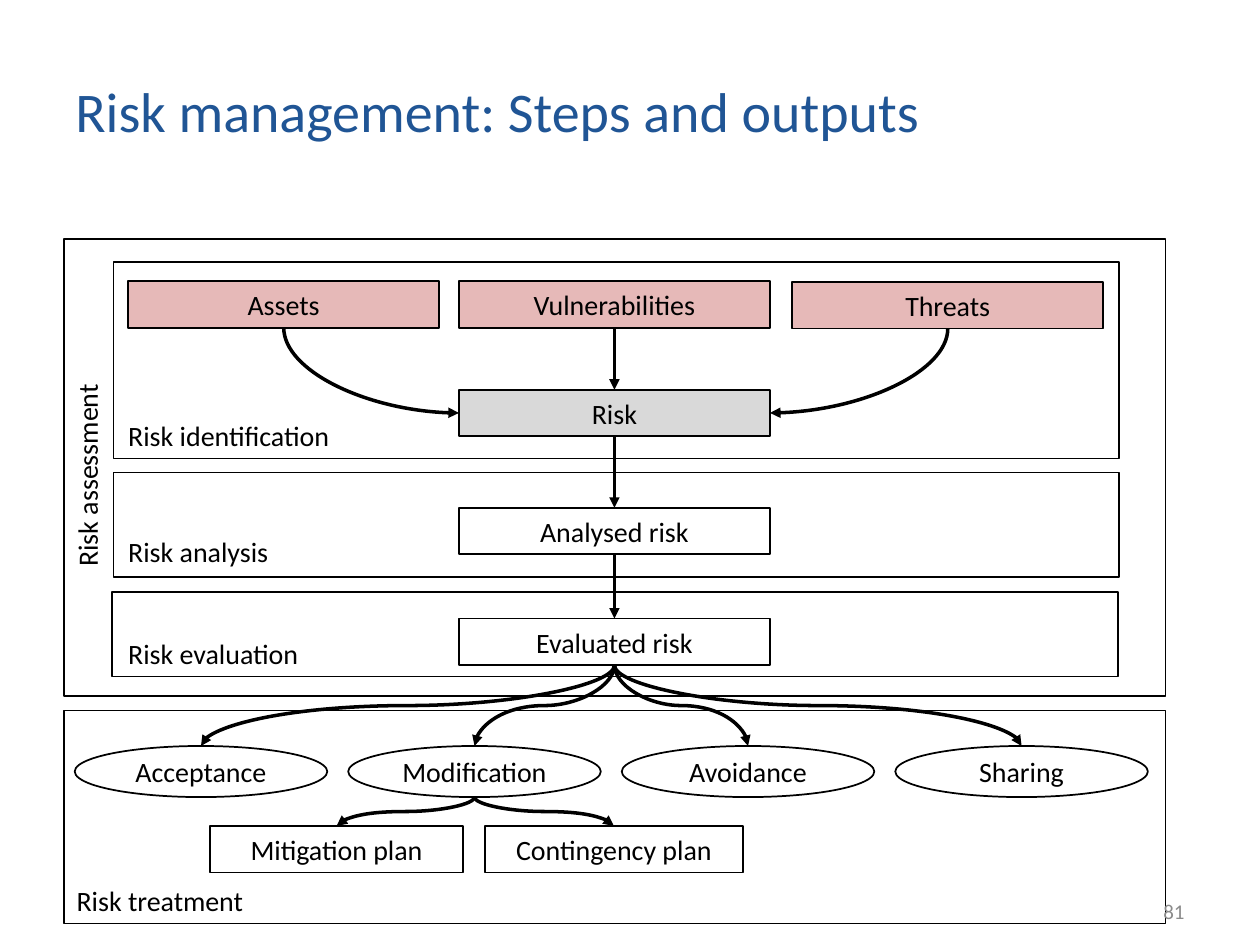
"""Build the slide on the steps and outputs of risk management."""
import lxml.etree
import pptx
import pptx.dml.color
import pptx.enum.shapes
import pptx.enum.text
import pptx.oxml.ns
import pptx.util

Pt = pptx.util.Pt
SHAPE = pptx.enum.shapes.MSO_SHAPE
CONNECTOR = pptx.enum.shapes.MSO_CONNECTOR
ALIGN = pptx.enum.text.PP_ALIGN
ANCHOR = pptx.enum.text.MSO_ANCHOR
qn = pptx.oxml.ns.qn
BLACK = "000000"
PINK = "E6B9B8"
GREY = "D9D9D9"


def color(value):
    return pptx.dml.color.RGBColor.from_string(value)


def add_box(kind, left, top, width, height, text="", fill=None):
    shape = slide.shapes.add_shape(kind, Pt(left), Pt(top), Pt(width), Pt(height))
    shape.shadow.inherit = False
    shape.line.color.rgb = color(BLACK)
    shape.line.width = Pt(1)
    if fill:
        shape.fill.solid()
        shape.fill.fore_color.rgb = color(fill)
    else:
        shape.fill.background()
    if text:
        frame = shape.text_frame
        frame.margin_left = frame.margin_right = frame.margin_top = frame.margin_bottom = 0
        frame.vertical_anchor = ANCHOR.MIDDLE
        paragraph = frame.paragraphs[0]
        paragraph.text = text
        paragraph.alignment = ALIGN.CENTER
        paragraph.font.name = "Calibri"
        paragraph.font.size = Pt(16)
        paragraph.font.color.rgb = color(BLACK)
    return shape


presentation = pptx.Presentation()
presentation.slide_width = Pt(720)
presentation.slide_height = Pt(540)
slide = presentation.slides.add_slide(presentation.slide_layouts[6])

for left, top, width, height in [
    (36.7, 136.8, 629.3, 260.8),
    (64.8, 149.8, 574.6, 112.3),
    (64.8, 270, 574.6, 59.8),
    (64.1, 338.5, 574.6, 48.2),
    (36.7, 406, 629.3, 121.8),
]:
    add_box(SHAPE.RECTANGLE, left, top, width, height)

boxes = {}
for text, left, top, width, fill in [
    ("Assets", 73.2, 160.7, 177.8, PINK),
    ("Vulnerabilities", 262.2, 160.7, 177.8, PINK),
    ("Threats", 452.7, 161.2, 177.8, PINK),
    ("Risk", 262.2, 222.7, 177.8, GREY),
    ("Analysed risk", 262.2, 290.2, 177.8, None),
    ("Evaluated risk", 262.2, 353.5, 177.8, None),
    ("Mitigation plan", 120, 472, 144.7, None),
    ("Contingency plan", 277.2, 472, 147.2, None),
]:
    boxes[text] = add_box(SHAPE.RECTANGLE, left, top, width, 26.6, text, fill)

treatments = ["Acceptance", "Modification", "Avoidance", "Sharing"]
for index, text in enumerate(treatments):
    boxes[text] = add_box(SHAPE.OVAL, 42.7 + 156.3 * index, 426.3, 144.3, 29.2, text)

arrows = []
main_steps = ["Vulnerabilities", "Risk", "Analysed risk", "Evaluated risk"]
for source, target in zip(main_steps, main_steps[1:]):
    arrow = slide.shapes.add_connector(CONNECTOR.STRAIGHT, 0, 0, 0, 0)
    arrow.begin_connect(boxes[source], 2)
    arrow.end_connect(boxes[target], 0)
    arrows.append(arrow)

curves = [("Assets", "Risk"), ("Threats", "Risk")]
curves += [("Evaluated risk", treatment) for treatment in treatments]
curves += [("Modification", "Mitigation plan"), ("Modification", "Contingency plan")]
for source, target in curves:
    start, end = boxes[source], boxes[target]
    start_x = start.left + start.width // 2
    start_y = start.top + start.height
    end_x, end_y = end.left + end.width // 2, end.top
    rightward = end_x > start_x
    if target == "Risk":
        end_x = end.left if rightward else end.left + end.width
        end_y = end.top + end.height // 2
    length, spread = end_y - start_y, abs(end_x - start_x)
    left = (start_x + end_x - length) // 2
    top = (start_y + end_y - spread) // 2
    arrow = slide.shapes.add_connector(
        CONNECTOR.CURVE, left, top, left + length, top + spread
    )
    properties = arrow._element.spPr
    transform = properties.find(qn("a:xfrm"))
    transform.set("rot", str((270 if rightward else 90) * 60000))
    if rightward:
        transform.set("flipH", "1")
    if target == "Risk":
        properties.find(qn("a:prstGeom")).set("prst", "curvedConnector2")
    arrows.append(arrow)

for arrow in arrows:
    arrow.line.color.rgb = color(BLACK)
    arrow.line.width = Pt(2)
    line = arrow.line._get_or_add_ln()
    lxml.etree.SubElement(line, qn("a:tailEnd")).set("type", "triangle")
    lxml.etree.SubElement(arrow._element.spPr, qn("a:effectLst"))

labels = [
    ("Risk management: Steps and outputs", 36, 21.6, 579, 82.8, 32, "205595"),
    ("81", 516.2, 506.2, 167.8, 28.8, 12, "8B8B8B"),
    ("Risk identification", 66.2, 235.6, 129, 26, 16, BLACK),
    ("Risk analysis", 66.2, 301.7, 94.3, 26, 16, BLACK),
    ("Risk evaluation", 66.2, 360.3, 111.6, 26, 16, BLACK),
    ("Risk treatment", 36.7, 501.3, 109.4, 26, 16, BLACK),
    ("Risk assessment", -10, 258.5, 118.8, 26, 16, BLACK),
]
for text, left, top, width, height, size, value in labels:
    label = slide.shapes.add_textbox(Pt(left), Pt(top), Pt(width), Pt(height))
    frame = label.text_frame
    frame.word_wrap = size != 16
    if size != 16:
        frame.vertical_anchor = ANCHOR.MIDDLE
    if text == "Risk assessment":
        label.rotation = 270
    paragraph = frame.paragraphs[0]
    paragraph.text = text
    paragraph.alignment = ALIGN.RIGHT if text == "81" else ALIGN.LEFT
    paragraph.font.name = "Calibri"
    paragraph.font.size = Pt(size)
    paragraph.font.color.rgb = color(value)

presentation.save("out.pptx")
